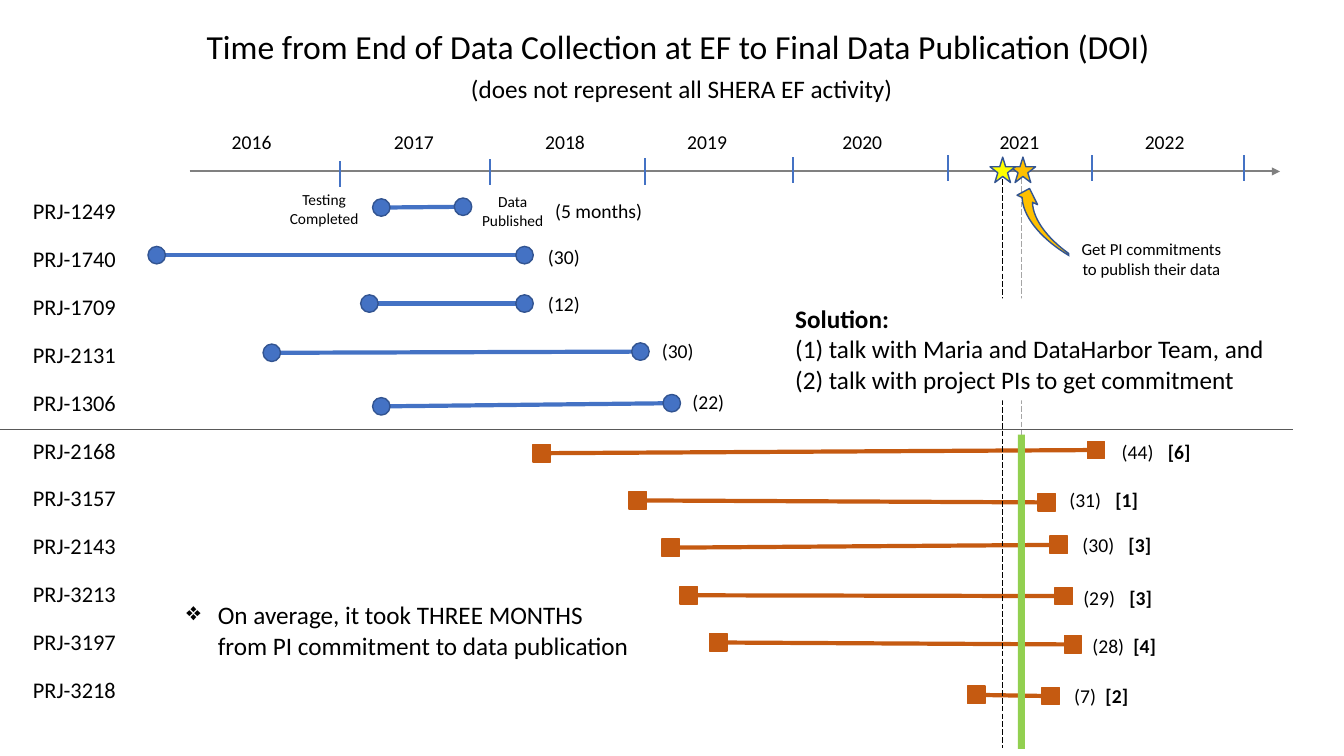
from lxml.etree import SubElement
from pptx import Presentation
from pptx.dml.color import RGBColor
from pptx.enum.dml import MSO_LINE
from pptx.enum.shapes import MSO_CONNECTOR, MSO_SHAPE
from pptx.enum.text import MSO_ANCHOR, PP_ALIGN
from pptx.oxml.ns import qn
from pptx.util import Cm, Pt

TITLE = "Time from End of Data Collection at EF to Final Data Publication (DOI)"
SUBTITLE = "(does not represent all SHERA EF activity)"
FINDING = "On average, it took THREE MONTHS from PI commitment to data publication"
SOLUTION = ["Solution:", "(1) talk with Maria and DataHarbor Team, and",
            "(2) talk with project PIs to get commitment"]
COMMITMENT = "Get PI commitments to publish their data"

# Year, left edge of its label, position of the tick closing it (x, y)
YEARS = [
    ("2016", 5.59, 8.56, 4.39),
    ("2017", 9.68, 12.34, 4.34),
    ("2018", 13.49, 16.26, 4.32),
    ("2019", 17.07, 19.99, 4.29),
    ("2020", 20.98, 23.88, 4.24),
    ("2021", 24.94, 27.51, 4.24),
    ("2022", 28.6, 31.34, 4.24),
]
# Project, testing completed (x, y), data published (x, y), months, label (x, y)
PUBLISHED = [
    ("PRJ-1249", (9.61, 5.23), (11.67, 5.21), "(5 months)", (13.74, 4.88)),
    ("PRJ-1740", (3.95, 6.43), (13.22, 6.43), "(30)", (13.56, 6.05)),
    ("PRJ-1709", (9.31, 7.65), (13.22, 7.65), "(12)", (13.56, 7.24)),
    ("PRJ-2131", (6.85, 8.89), (16.14, 8.86), "(30)", (16.43, 8.41)),
    ("PRJ-1306", (9.61, 10.24), (16.93, 10.16), "(22)", (17.2, 9.7)),
]
# As above, then months since commitment and the tab stop before them
COMMITTED = [
    ("PRJ-2168", (13.65, 11.42), (27.62, 11.34), "(44)", (28.02, 10.95), "[6]", 1.16),
    ("PRJ-3157", (16.07, 12.61), (26.38, 12.66), "(31)", (26.7, 12.17), "[1]", 1.16),
    ("PRJ-2143", (16.9, 13.8), (26.68, 13.73), "(30)", (27.03, 13.31), "[3]", 1.16),
    ("PRJ-3213", (17.36, 15), (26.81, 15.02), "(29)", (27.05, 14.63), "[3]", 1.16),
    ("PRJ-3197", (18.1, 16.19), (27.04, 16.24), "(28)", (27.28, 15.85), "[4]", 1.03),
    ("PRJ-3218", (24.6, 17.51), (26.48, 17.54), "(7)", (26.82, 17.12), "[2]", 0.79),
]
BLUE, NAVY, ORANGE, GOLD = "4472C4", "325491", "C55A11", "FFC000"
AXIS_Y, TICK, MARKER, STAR = 4.32, 0.66, 0.44, 0.64

prs = Presentation()
prs.slide_width, prs.slide_height = Cm(33.87), Cm(19.05)
s = prs.slides.add_slide(prs.slide_layouts[5])


def rgb(color):
    return RGBColor.from_string(color)


def box(x, y, w, h):
    return Cm(x), Cm(y), Cm(w), Cm(h)


def write(sp, lines, size, align=PP_ALIGN.LEFT, anchor=MSO_ANCHOR.TOP):
    tf = sp.text_frame
    tf.word_wrap = True
    tf.vertical_anchor = anchor
    tf.text = "\n".join(lines)
    for p in tf.paragraphs:
        p.alignment = align
        for r in p.runs:
            style(r, size)
    return tf


def style(r, size, bold=False):
    r.font.name, r.font.size, r.font.bold = "Calibri", Pt(size), bold
    r.font.color.rgb = rgb("000000")


def text(x, y, w, h, lines, size, align=PP_ALIGN.LEFT):
    return write(s.shapes.add_textbox(*box(x, y, w, h)), lines, size, align)


def line(start, end, color, width):
    c = s.shapes.add_connector(MSO_CONNECTOR.STRAIGHT, *map(Cm, start + end))
    c.line.color.rgb, c.line.width = rgb(color), Pt(width)
    SubElement(c._element.spPr, qn("a:effectLst"))
    return c


def shape(kind, x, y, w, h, fill, outline=None):
    sp = s.shapes.add_shape(kind, *box(x, y, w, h))
    sp.shadow.inherit = False
    sp.fill.solid()
    sp.fill.fore_color.rgb = rgb(fill)
    if outline:
        sp.line.color.rgb, sp.line.width = rgb(outline), Pt(1)
    else:
        sp.line.fill.background()
    return sp


def centred(kind, x, y, size, fill, outline):
    return shape(kind, x - size / 2, y - size / 2, size, size, fill, outline)


def duration(kind, start, end, fill, outline, months, label_at):
    line(start, end, fill, 3)
    for x, y in (start, end):
        centred(kind, x, y, MARKER, fill, outline)
    return text(*label_at, 3, 0.86, [months], 14)


# Headings
title = s.shapes.title
title.left, title.top, title.width, title.height = box(3.84, 0.53, 26.5, 1.27)
write(title, [TITLE], 24, PP_ALIGN.CENTER)
text(10.53, 1.73, 13.3, 1.02, [SUBTITLE], 18, PP_ALIGN.CENTER)

# Time axis
line((25.73, 4.09), (25.73, 18.62), "A5A5A5", 0.5).line.dash_style = MSO_LINE.LONG_DASH
axis = line((4.78, AXIS_Y), (32.26, AXIS_Y), "808080", 1.5)
SubElement(axis.line._get_or_add_ln(), qn("a:tailEnd"), type="triangle")
for year, label_x, tick_x, tick_y in YEARS:
    line((tick_x, tick_y - TICK / 2), (tick_x, tick_y + TICK / 2), BLUE, 1.5)
    text(label_x, 3.16, 1.7, 0.86, [year], 14)

# Projects
names = [project[0] for project in PUBLISHED + COMMITTED]
for p in text(0.58, 4.85, 3, 13.13, names, 16).paragraphs:
    p.space_after = Pt(15)
line((0, 10.82), (32.59, 10.82), "595959", 0.5)
for _, start, end, months, label_at in PUBLISHED:
    duration(MSO_SHAPE.OVAL, start, end, BLUE, NAVY, months, label_at)
for _, start, end, months, label_at, since, stop in COMMITTED:
    tf = duration(MSO_SHAPE.RECTANGLE, start, end, ORANGE, ORANGE, months + "\t", label_at)
    p = tf.paragraphs[0]
    tabs = SubElement(p._p.get_or_add_pPr(), qn("a:tabLst"))
    SubElement(tabs, qn("a:tab"), pos=str(Cm(stop)), algn="l")
    r = p.add_run()
    r.text = since
    style(r, 14, bold=True)
text(6.64, 4.67, 3.06, 1.19, ["Testing", "Completed"], 11, PP_ALIGN.CENTER)
text(11.49, 4.72, 2.86, 1.19, ["Data", "Published"], 11, PP_ALIGN.CENTER)

# Finding
p = text(4.45, 14.99, 11.66, 2.57, [FINDING], 18).paragraphs[0]
pPr = p._p.get_or_add_pPr()
pPr.set("marL", str(Cm(0.79)))
pPr.set("indent", str(-Cm(0.79)))
SubElement(pPr, qn("a:buChar"), char="❖")

# Commitment dates and solution
line((25.27, AXIS_Y), (25.27, 18.85), "000000", 0.5).line.dash_style = MSO_LINE.LONG_DASH
for x, color in ((25.78, GOLD), (25.27, "FFFF00")):
    centred(MSO_SHAPE.STAR_5_POINT, x, AXIS_Y - 0.04, STAR, color, NAVY)
solution = shape(MSO_SHAPE.RECTANGLE, 19.79, 7.52, 12.83, 2.57, "FFFFFF")
tf = write(solution, SOLUTION, 18)
tf.paragraphs[0].runs[0].font.bold = True
arrow = shape(MSO_SHAPE.CURVED_RIGHT_ARROW, 27.05, 3.76, 1.14, 4.78, GOLD, NAVY)
arrow.rotation = 114.8
arrow._element.spPr.find(qn("a:xfrm")).set("flipH", "1")
note = shape(MSO_SHAPE.RECTANGLE, 26.95, 5.89, 4.14, 1.27, "FFFFFF")
write(note, [COMMITMENT], 12, PP_ALIGN.CENTER)
shape(MSO_SHAPE.RECTANGLE, 25.65, 10.95, 0.18, 7.92, "92D050")

prs.save("out.pptx")
